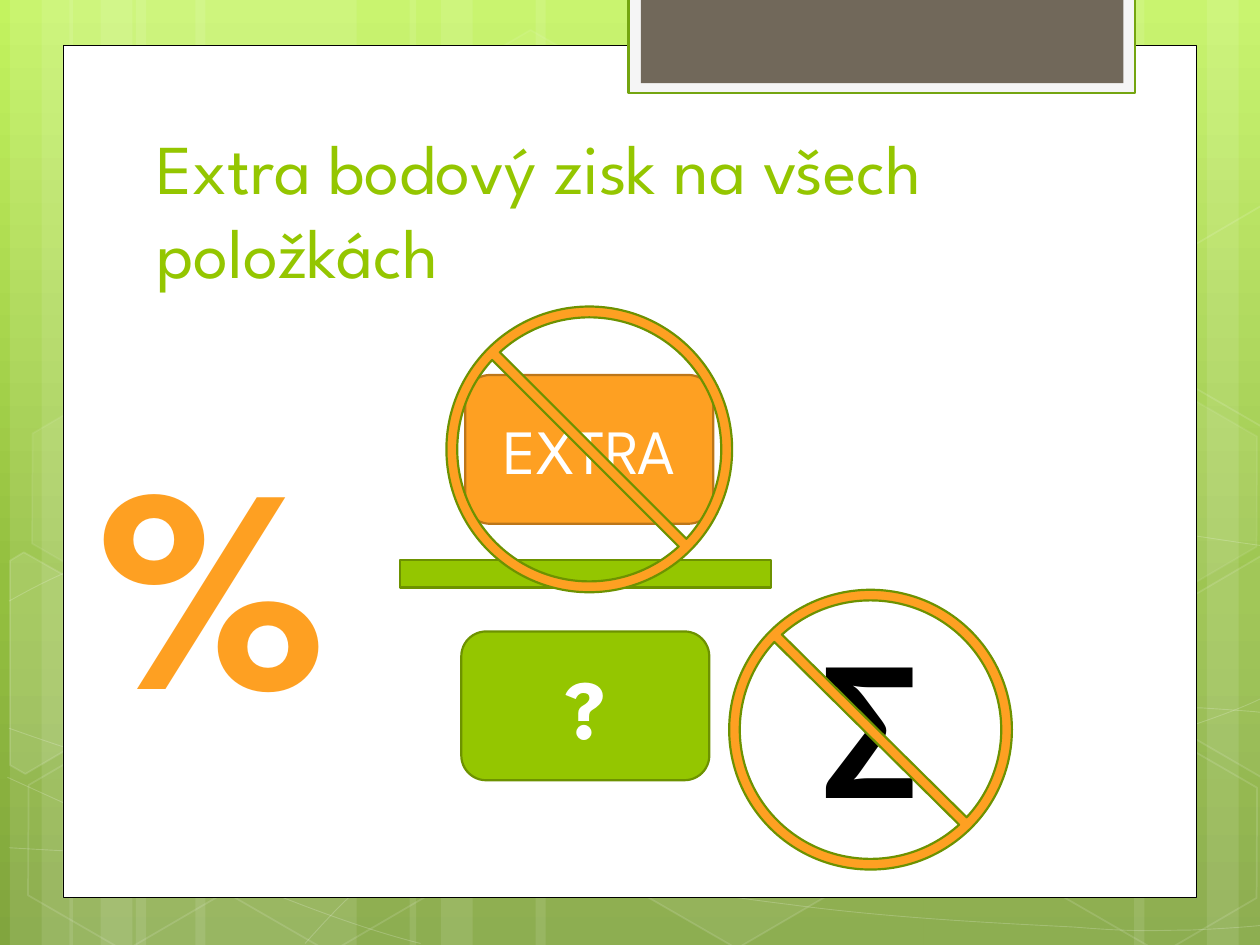
import math
from copy import deepcopy
from dataclasses import dataclass
from typing import Optional

from lxml import etree
from pptx import Presentation
from pptx import util as u
from pptx.dml.color import RGBColor
from pptx.enum import shapes, text
from pptx.oxml.ns import qn

COLORS = {
    "white": "FFFFFF", "black": "000000", "green": "94C600", "green_edge": "6D9200",
    "orange": "FEA022", "orange_edge": "BC7619", "tab": "F5F5F5", "tab_edge": "74A510",
    "brown": "71685A", "sky": "C3F35F", "meadow": "93BF3F", "moss": "81A53E",
}
FONT = "League Spartan"
KIND = shapes.MSO_SHAPE
PAGE_WIDTH, PAGE_HEIGHT = 25.4, 19.05
TILT = 30
Point = tuple[float, float]


@dataclass
class Paint:
    fill: Optional[str] = None
    line: Optional[str] = None
    width: float = 1.25
    fill_alpha: int = 100
    line_alpha: int = 100


@dataclass
class Box:
    left: float
    top: float
    width: float
    height: float

    def lengths(self) -> list[u.Length]:
        return [u.Cm(value) for value in (self.left, self.top, self.width, self.height)]


@dataclass
class Label:
    words: str
    size: float
    color: str
    bold: bool = False
    font: str = FONT


def rgb(name: str) -> RGBColor:
    return RGBColor.from_string(COLORS[name])


def set_alpha(fill_parent, percent: int) -> None:
    if percent < 100:
        color = fill_parent.find(qn("a:solidFill"))[0]
        etree.SubElement(color, qn("a:alpha")).set("val", str(percent * 1000))


def paint_shape(shape, paint: Paint) -> None:
    shape.shadow.inherit = False
    if paint.fill:
        shape.fill.solid()
        shape.fill.fore_color.rgb = rgb(paint.fill)
        set_alpha(shape._element.spPr, paint.fill_alpha)
    else:
        shape.fill.background()
    if paint.line:
        shape.line.color.rgb = rgb(paint.line)
        shape.line.width = u.Pt(paint.width)
        set_alpha(shape._element.spPr.find(qn("a:ln")), paint.line_alpha)
    else:
        shape.line.fill.background()


def write_label(shape, label: Label, anchor, align) -> None:
    frame = shape.text_frame
    frame.word_wrap = True
    frame.vertical_anchor = anchor
    para = frame.paragraphs[0]
    para.text = label.words
    para.alignment = align
    para.font.name = label.font
    para.font.size = u.Pt(label.size)
    para.font.bold = label.bold
    para.font.color.rgb = rgb(label.color)


def add_preset(target, kind, box: Box, paint: Paint, adjust: Optional[float] = None,
               rotation: float = 0, label: Optional[Label] = None) -> None:
    shape = target.add_shape(kind, *box.lengths())
    paint_shape(shape, paint)
    shape.rotation = rotation
    if adjust is not None:
        shape.adjustments[0] = adjust
    if label:
        write_label(shape, label, text.MSO_ANCHOR.MIDDLE, text.PP_ALIGN.CENTER)


def add_text(target, box: Box, label: Label, anchor=text.MSO_ANCHOR.TOP) -> None:
    write_label(target.add_textbox(*box.lengths()), label, anchor, text.PP_ALIGN.LEFT)


def add_outline(target, points: list[Point], paint: Paint, close: bool):
    start, *rest = [(u.Cm(x), u.Cm(y)) for x, y in points]
    builder = target.build_freeform(*start)
    builder.add_line_segments(rest, close=close)
    shape = builder.convert_to_shape()
    paint_shape(shape, paint)
    return shape


def add_curve(target, nodes: list[Point], paint: Paint) -> None:
    shape = add_outline(target, nodes, paint, False)
    track = next(shape._element.iter(qn("a:path")))
    segments = track.findall(qn("a:lnTo"))
    for first in range(0, len(segments), 3):
        curve = etree.SubElement(track, qn("a:cubicBezTo"))
        for segment in segments[first:first + 3]:
            curve.append(segment[0])
            track.remove(segment)


def add_tilted_outline(target, points: list[Point], center: Point, paint: Paint) -> None:
    cosine, sine = math.cos(math.radians(TILT)), math.sin(math.radians(TILT))
    middle_x, middle_y = center
    upright = [(middle_x + (x - middle_x) * cosine + (y - middle_y) * sine,
                middle_y - (x - middle_x) * sine + (y - middle_y) * cosine) for x, y in points]
    add_outline(target, upright, paint, True).rotation = TILT


def glass(fill_alpha: int, line_alpha: int) -> Paint:
    return Paint("white" if fill_alpha else None, "white", 1, fill_alpha, line_alpha)


STRIPES = [(2.74, 4.45, 0), (0.2, 1.27, 0), (0.84, 2.11, 0), (3.94, 4.45, 0), (1.4, 1.27, 0),
           (2.03, 2.11, 0), (18.62, 4.45, 180), (24.33, 1.27, 180), (22.86, 2.11, 180),
           (10.8, 7.82, 0), (8.26, 1.27, 0), (8.89, 2.11, 0)]
CURVES = [
    [(0.18, 17.09), (1.55, 17.17), (2.92, 17.25), (4.83, 17.22), (6.73, 17.2), (9.09, 17.15),
     (11.63, 16.89), (14.17, 16.64), (17.78, 16.15), (20.12, 15.67), (22.43, 15.19),
     (24.82, 14.43), (25.58, 14)],
    [(0.18, 12.12), (0.91, 11.71), (1.65, 11.33), (3.07, 10.95), (4.52, 10.57), (6.58, 10.01),
     (8.81, 9.83), (11.07, 9.65), (13.82, 9.63), (16.61, 9.83), (19.41, 10.03),
     (24.05, 10.82), (25.58, 11.02)],
    [(0.15, 15.67), (3.23, 17.07), (6.27, 18.47), (8.48, 19.02)],
    [(0.18, 14.68), (0.97, 14.96), (1.78, 15.24), (3.25, 15.65), (4.72, 16.03), (6.93, 16.66),
     (9.07, 17.09), (11.18, 17.53), (13.84, 17.98), (15.95, 18.24), (18.06, 18.52),
     (20.32, 18.62), (21.67, 18.69), (22.99, 18.8), (23.34, 18.75), (24, 18.75),
     (24.66, 18.72), (25.12, 18.69), (25.58, 18.64)],
    [(6.15, 19.02), (6.6, 18.52), (7.06, 18.01), (7.67, 17.55), (8.28, 17.09), (9.14, 16.59),
     (9.86, 16.23), (10.57, 15.88), (11, 15.72), (11.94, 15.47), (12.85, 15.21),
     (14.55, 14.86), (15.44, 14.68), (16.36, 14.5), (16.48, 14.5), (17.27, 14.45),
     (18.03, 14.38), (19.3, 14.3), (20.17, 14.27), (21.06, 14.25), (22.5, 14.27),
     (22.5, 14.27), (22.5, 14.27), (24.21, 14.27), (24.21, 14.27), (24.66, 14.3),
     (25.1, 14.33), (25.32, 14.35), (25.55, 14.38), (25.48, 14.35), (25.55, 14.38)],
]
HEXAGONS = [(8.48, 0.91, 4, 8), (12.62, 14.96, 6, 12), (0.28, 15.01, 0, 12), (0.36, 7.92, 7, 8),
            (4.42, 15.04, 0, 12), (19.13, 11.51, 10, 12), (21.18, 15.06, 0, 12),
            (21.18, 7.98, 7, 8)]
LEFT_CUT = [(0.2, 11.3), (0.48, 11.13), (2.44, 12.24), (2.41, 14.48), (0.51, 15.6), (0.2, 15.42)]
RIGHT_CUT = [(23.52, 12.32), (25.43, 11.2), (25.63, 11.33), (25.63, 15.57), (25.45, 15.67),
             (23.52, 14.55)]
UPPER_CUT = [(x, y - 7.06) for x, y in RIGHT_CUT]
CUTS = [(LEFT_CUT, (0.91, 13.59), 10), (RIGHT_CUT, (25.02, 13.21), 4),
        (UPPER_CUT, (25.02, 6.12), 0)]


def draw_background(page) -> None:
    fill = page.background.fill
    fill.gradient()
    fill.gradient_angle = 270
    stop_list = next(page._element.iter(qn("a:gsLst")))
    stop_list.insert(1, deepcopy(stop_list[0]))
    stops = ((0, "sky"), (0.62, "meadow"), (1, "moss"))
    for stop, (position, color) in zip(fill.gradient_stops, stops):
        stop.position = position
        stop.color.rgb = rgb(color)

    decor = page.shapes.add_group_shape().shapes
    for left, width, rotation in STRIPES:
        add_preset(decor, KIND.RECTANGLE, Box(left, 0, width, PAGE_HEIGHT),
                   Paint("white", fill_alpha=10), rotation=rotation)
    for nodes in CURVES:
        add_curve(decor, nodes, Paint(None, "white", 0.5, line_alpha=20))
    for left, top, fill_alpha, line_alpha in HEXAGONS:
        add_preset(decor, KIND.HEXAGON, Box(left, top, 4.45, 3.86),
                   glass(fill_alpha, line_alpha), 0.285, TILT)
    for points, center, fill_alpha in CUTS:
        add_tilted_outline(decor, points, center, glass(fill_alpha, 12))


def draw_content(page) -> None:
    items = page.shapes
    add_preset(items, KIND.RECTANGLE, Box(1.27, 0.91, 22.86, 17.19), Paint("white", "black", 0.5))
    add_preset(items, KIND.RECTANGLE, Box(12.67, -0.05, 10.21, 1.93), Paint("tab", "tab_edge"))
    add_preset(items, KIND.RECTANGLE, Box(12.92, -0.05, 9.73, 1.73), Paint("brown"))
    add_text(items, Box(2.9, 2.12, 19.51, 3.9),
             Label("Extra bodový zisk na všech\vpoložkách", 40, "green"), text.MSO_ANCHOR.BOTTOM)
    add_text(items, Box(1.7, 7.92, 4.8, 7.34), Label("%", 166, "orange", True))

    green = Paint("green", "green_edge")
    ban = Paint("orange", "green_edge")
    add_preset(items, KIND.MATH_MINUS, Box(6.71, 10.37, 10.19, 2.39), green)
    add_preset(items, KIND.ROUNDED_RECTANGLE, Box(9.3, 12.73, 5, 3), green,
               label=Label("?", 48, "white", True))
    add_preset(items, KIND.ROUNDED_RECTANGLE, Box(9.38, 7.56, 5, 3),
               Paint("orange", "orange_edge"), label=Label("EXTRA", 36, "white"))
    banned_sum = items.add_group_shape().shapes
    add_text(banned_sum, Box(16.33, 11.91, 2.57, 5.38), Label("Σ", 115, "black", True, "Calibri"))
    add_preset(banned_sum, KIND.NO_SYMBOL, Box(14.7, 11.89, 5.7, 5.64), ban, 0.038)
    add_preset(items, KIND.NO_SYMBOL, Box(9, 6.18, 5.76, 5.76), ban, 0.038)


def main() -> None:
    deck = Presentation()
    deck.slide_width, deck.slide_height = u.Cm(PAGE_WIDTH), u.Cm(PAGE_HEIGHT)
    page = deck.slides.add_slide(deck.slide_layouts[6])
    draw_background(page)
    draw_content(page)
    deck.save("out.pptx")


if __name__ == "__main__":
    main()
